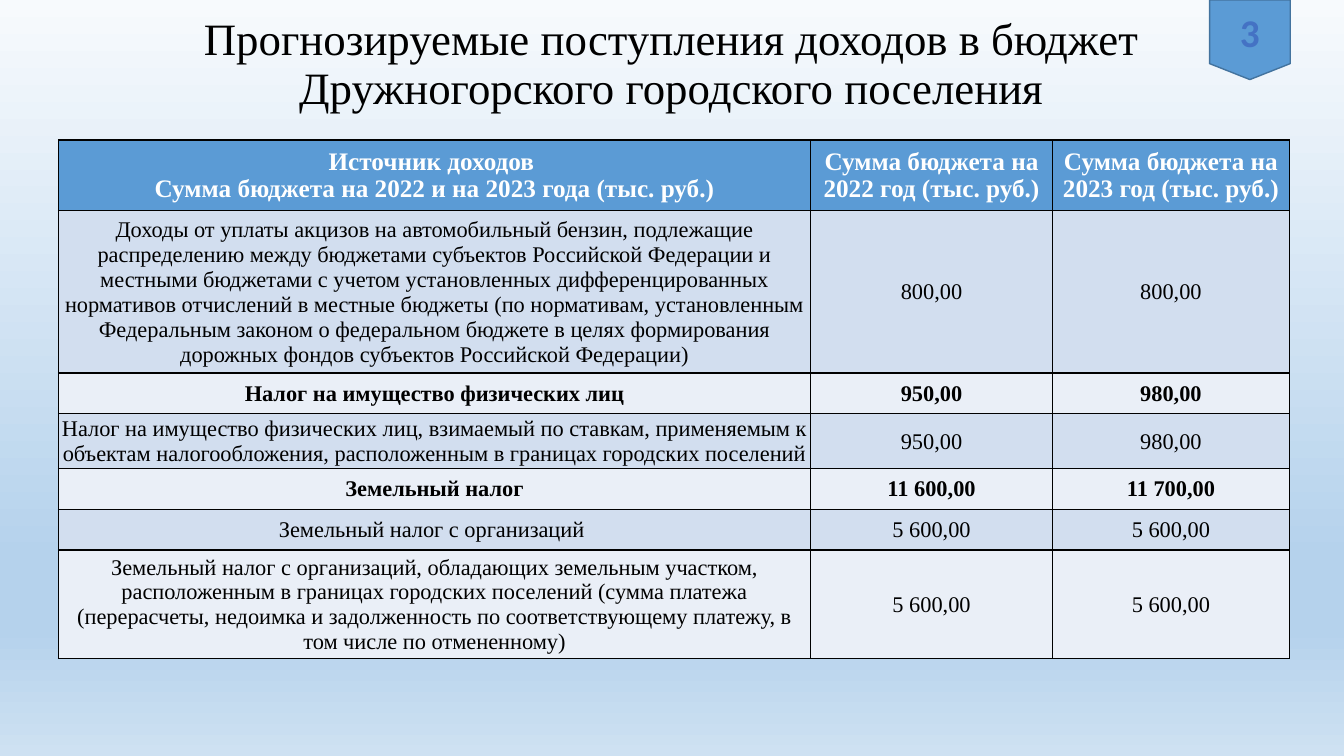
from lxml.etree import SubElement
from pptx import Presentation
from pptx.dml.color import RGBColor
from pptx.enum.shapes import MSO_SHAPE
from pptx.enum.text import MSO_ANCHOR, PP_ALIGN
from pptx.oxml import parse_xml
from pptx.oxml.ns import nsdecls, qn
from pptx.util import Inches, Pt

BLACK = RGBColor(0x00, 0x00, 0x00)
WHITE = RGBColor(0xFF, 0xFF, 0xFF)
BLUE = RGBColor(0x5B, 0x9B, 0xD5)
BADGE_EDGE = RGBColor(0x43, 0x73, 0x9E)
BADGE_DIGIT = RGBColor(0x44, 0x72, 0xC4)
BAND_DARK = RGBColor(0xD2, 0xDE, 0xEF)
BAND_LIGHT = RGBColor(0xEA, 0xEF, 0xF7)
SKY = [
    (0, RGBColor(0xF7, 0xFA, 0xFD)),
    (74, RGBColor(0xB5, 0xD2, 0xEC)),
    (83, RGBColor(0xB5, 0xD2, 0xEC)),
    (100, RGBColor(0xCE, 0xE1, 0xF2)),
]

HEADINGS = [
    "Источник доходов \nСумма бюджета на 2022 и на 2023 года (тыс. руб.)",
    "Сумма бюджета на 2022 год (тыс. руб.)",
    "Сумма бюджета на 2023 год (тыс. руб.)",
]
# Source of income, 2022, 2023, whether it is a group total
INCOME = [
    ("Доходы от уплаты акцизов на автомобильный бензин, подлежащие распределению "
     "между бюджетами субъектов Российской Федерации и местными бюджетами с учетом "
     "установленных дифференцированных нормативов отчислений в местные бюджеты "
     "(по нормативам, установленным Федеральным законом о федеральном бюджете в целях "
     "формирования дорожных фондов субъектов Российской Федерации)",
     "800,00", "800,00", False),
    ("Налог на имущество физических лиц", "950,00", "980,00", True),
    ("Налог на имущество физических лиц, взимаемый по ставкам, применяемым к объектам "
     "налогообложения, расположенным в границах городских поселений",
     "950,00", "980,00", False),
    ("Земельный налог", "11 600,00", "11 700,00", True),
    ("Земельный налог с организаций ", "5 600,00", "5 600,00", False),
    ("Земельный налог с организаций, обладающих земельным участком, расположенным в "
     "границах городских поселений (сумма платежа (перерасчеты, недоимка и "
     "задолженность по соответствующему платежу, в том числе по отмененному)",
     "5 600,00", "5 600,00", False),
]


class BudgetSlide:
    """Draws on one slide; lengths are percentages of its width and height."""

    FONT = "Times New Roman"

    def __init__(self, presentation):
        self.width = presentation.slide_width
        self.height = presentation.slide_height
        self.slide = presentation.slides.add_slide(presentation.slide_layouts[6])

    def across(self, percent):
        return round(self.width * percent / 100)

    def down(self, percent):
        return round(self.height * percent / 100)

    def box(self, left, top, width, height):
        return self.across(left), self.down(top), self.across(width), self.down(height)

    def background(self, stops):
        fill = self.slide.background.fill
        fill.gradient()
        fill.gradient_angle = 270
        stop_list = self.slide.element.find(".//" + qn("a:gsLst"))
        for default_stop in list(stop_list):
            stop_list.remove(default_stop)
        for percent, color in stops:
            stop = SubElement(stop_list, qn("a:gs"), pos=str(percent * 1000))
            SubElement(stop, qn("a:srgbClr"), val=str(color))

    def set_text(self, frame, text, size, color, bold=False, font=FONT, spacing=None):
        frame.word_wrap = True
        frame.text = text
        for paragraph in frame.paragraphs:
            paragraph.alignment = PP_ALIGN.CENTER
            paragraph.line_spacing = spacing
            paragraph.font.name = font
            paragraph.font.size = Pt(size)
            paragraph.font.bold = bold
            paragraph.font.color.rgb = color

    def title(self, text, *place):
        frame = self.slide.shapes.add_textbox(*self.box(*place)).text_frame
        frame.vertical_anchor = MSO_ANCHOR.BOTTOM
        self.set_text(frame, text, 32, BLACK, spacing=0.9)

    def badge(self, number, *place):
        badge = self.slide.shapes.add_shape(
            MSO_SHAPE.FLOWCHART_OFFPAGE_CONNECTOR, *self.box(*place))
        badge.shadow.inherit = False
        badge.fill.solid()
        badge.fill.fore_color.rgb = BLUE
        badge.line.color.rgb = BADGE_EDGE
        badge.line.width = Pt(1)
        badge.text_frame.vertical_anchor = MSO_ANCHOR.MIDDLE
        self.set_text(badge.text_frame, number, 28, BADGE_DIGIT, bold=True, font="Calibri")

    def cell(self, cell, text, fill, size, color, bold):
        cell.vertical_anchor = MSO_ANCHOR.MIDDLE
        cell.fill.solid()
        cell.fill.fore_color.rgb = fill
        self.set_text(cell.text_frame, text, size, color, bold)
        properties = cell._tc.get_or_add_tcPr()
        for position, side in enumerate(("lnL", "lnR", "lnT", "lnB")):
            properties.insert(position, parse_xml(
                f'<a:{side} {nsdecls("a")} w="{Pt(1)}"><a:solidFill>'
                f'<a:srgbClr val="{BLACK}"/></a:solidFill></a:{side}>'))

    def table(self, headings, records, left, top, widths, row_height):
        row_count = len(records) + 1
        table = self.slide.shapes.add_table(
            row_count, len(widths),
            *self.box(left, top, sum(widths), row_height * row_count)).table
        for column, width in zip(table.columns, widths):
            column.width = self.across(width)
        for column, heading in enumerate(headings):
            self.cell(table.cell(0, column), heading, BLUE, 18, WHITE, True)
        for row, (*values, is_total) in enumerate(records, start=1):
            band = BAND_DARK if row % 2 else BAND_LIGHT
            for column, value in enumerate(values):
                cell = table.cell(row, column)
                cell.margin_left = cell.margin_right = cell.margin_top = Inches(0.01)
                cell.margin_bottom = 0
                self.cell(cell, value, band, 16, BLACK, is_total)


def main():
    presentation = Presentation()
    presentation.slide_width = Inches(13.33)
    presentation.slide_height = Inches(7.5)
    budget = BudgetSlide(presentation)
    budget.background(SKY)
    budget.title("Прогнозируемые поступления доходов в бюджет "
                 "Дружногорского городского поселения", 6.83, 0, 86.25, 15.73)
    budget.table(HEADINGS, INCOME, 4.35, 18.53, (55.96, 18, 17.63), 5.4)
    budget.badge("3", 90, 0, 6, 10.53)
    presentation.save("out.pptx")


if __name__ == "__main__":
    main()
